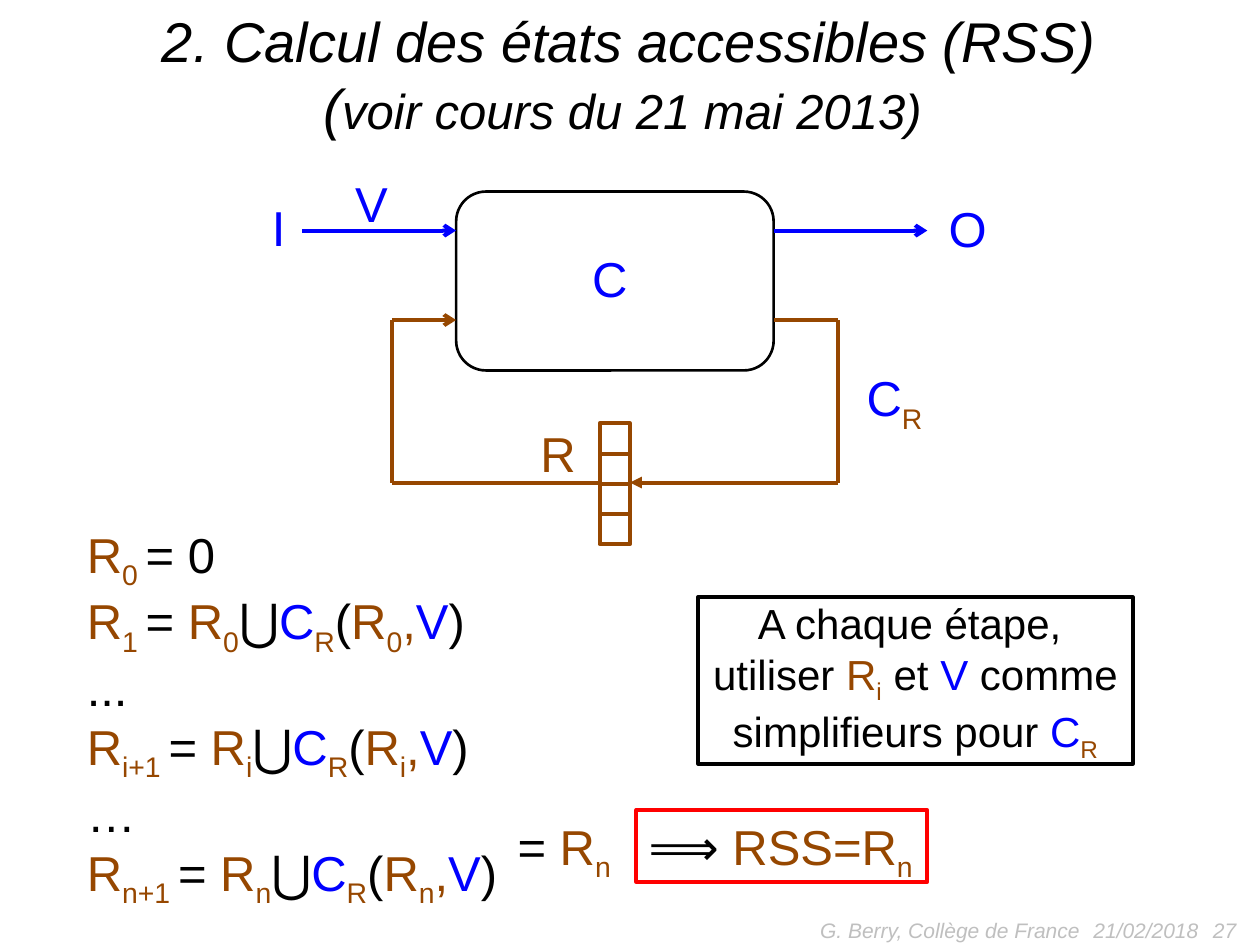
from lxml import etree
from pptx import Presentation
from pptx.dml.color import RGBColor
from pptx.enum.shapes import MSO_CONNECTOR, MSO_SHAPE
from pptx.enum.text import MSO_ANCHOR, MSO_AUTO_SIZE, PP_ALIGN
from pptx.oxml.ns import qn
from pptx.util import Inches, Pt

LEFT, CENTER, RIGHT = PP_ALIGN.LEFT, PP_ALIGN.CENTER, PP_ALIGN.RIGHT
TOP, MIDDLE = MSO_ANCHOR.TOP, MSO_ANCHOR.MIDDLE
FONT = "Arial"
COLORS = {"black": "000000", "blue": "0000FF", "brown": "964700",
          "red": "FF0000", "grey": "BFBFBF"}

# A run is (text, color) or (text, color, "sub").


def state(index):
    return [("R", "brown"), (index, "brown", "sub")]


def step(following, current):
    """Runs of one iteration: R_following = R_current ⋃ C_R(R_current, V)."""
    return [*state(following + " "), ("= ", "black"), *state(current),
            ("⋃", "black"), *NEXT_STATE, ("(", "black"), *state(current),
            (",", "brown"), ("V", "blue"), (")", "black")]


NEXT_STATE = [("C", "blue"), ("R", "brown", "sub")]
TITLE = [("2. Calcul des états accessibles (RSS)\v(", 32),
         ("voir cours du 21 mai 2013) ", 28)]
EQUATIONS = [
    [*state("0 "), ("= 0", "black")],
    step("1", "0"),
    [("...", "black")],
    step("i+1", "i"),
    [("…", "black")],
    step("n+1", "n"),
]
FIXPOINT = [("=", "black"), (" R", "brown"), ("n", "brown", "sub")]
RESULT = [("⟹", "black"), (" RSS=R", "brown"), ("n", "brown", "sub")]
ADVICE = [
    [("A chaque étape, ", "black")],
    [("utiliser ", "black"), *state("i"), (" et ", "black"),
     ("V", "blue"), (" comme", "black")],
    [("simplifieurs pour ", "black"), *NEXT_STATE],
]
FOOTER = [  # text, left, width, alignment
    ("21/02/2018", 8.58, 1.3, LEFT),
    (" 27", 7.58, 2.33, RIGHT),
    ("G. Berry, Collège de France", 5.5, 3.17, RIGHT),
]

# Circuit diagram, in inches
LOGIC_LEFT, LOGIC_TOP, LOGIC_W, LOGIC_H = 3.62, 1.52, 2.52, 1.42
LOGIC_RIGHT = LOGIC_LEFT + LOGIC_W
REGISTER_LEFT, REGISTER_TOP, CELL, CELLS = 4.76, 3.36, 0.24, 4
SIGNAL_Y, FEEDBACK_Y, REGISTER_Y = 1.83, 2.54, 3.83
LOOP_LEFT, LOOP_RIGHT, SIGNAL_LENGTH = 3.11, 6.65, 1.22
WIRES = [  # start, end, color, arrowhead
    ((REGISTER_LEFT, REGISTER_Y), (LOOP_LEFT, REGISTER_Y), "brown", None),
    ((LOOP_LEFT, FEEDBACK_Y), (LOOP_LEFT, REGISTER_Y), "brown", None),
    ((LOOP_RIGHT, FEEDBACK_Y), (LOOP_RIGHT, REGISTER_Y), "brown", None),
    ((LOOP_LEFT, FEEDBACK_Y), (LOGIC_LEFT, FEEDBACK_Y), "brown", "arrow"),
    ((LOOP_RIGHT, FEEDBACK_Y), (LOGIC_RIGHT, FEEDBACK_Y), "brown", None),
    ((LOGIC_LEFT - SIGNAL_LENGTH, SIGNAL_Y), (LOGIC_LEFT, SIGNAL_Y), "blue", "arrow"),
    ((LOGIC_RIGHT, SIGNAL_Y), (LOGIC_RIGHT + SIGNAL_LENGTH, SIGNAL_Y), "blue", "arrow"),
    ((LOOP_RIGHT, REGISTER_Y), (REGISTER_LEFT + CELL, REGISTER_Y), "brown", "triangle"),
]
LABELS = [  # runs, left, top, width
    ([("C", "blue")], 4.6, 1.92, 0.48),
    ([("I", "blue")], 2.06, 1.52, 0.31),
    ([("O", "blue")], 7.43, 1.53, 0.51),
    (NEXT_STATE, 6.78, 2.87, 0.68),
    ([("R", "brown")], 4.19, 3.31, 0.49),
    ([("V", "blue")], 2.72, 1.33, 0.46),
]
LABEL_H = 0.57


def rgb(color):
    return RGBColor.from_string(COLORS[color])


def style(run, size, color, italic=False):
    run.font.name, run.font.size, run.font.italic = FONT, Pt(size), italic
    run.font.color.rgb = rgb(color)


def write(shape, lines, size, align=LEFT, anchor=TOP, italic=False, wrap=False):
    frame = shape.text_frame
    frame.word_wrap, frame.vertical_anchor = wrap, anchor
    for number, runs in enumerate(lines):
        paragraph = frame.add_paragraph() if number else frame.paragraphs[0]
        paragraph.alignment = align
        for text, color, *sub in runs:
            run = paragraph.add_run()
            run.text = text
            style(run, size, color, italic)
            if sub:
                run.font._element.set("baseline", "-25000")


def add_text(slide, box, lines, size, **options):
    write(slide.shapes.add_textbox(*map(Inches, box)), lines, size, **options)


def add_frame(slide, preset, box, color, width=2.25):
    shape = slide.shapes.add_shape(preset, *map(Inches, box))
    shape.shadow.inherit = False
    shape.fill.background()
    shape.line.color.rgb = rgb(color)
    shape.line.width = Pt(width)
    return shape


def add_wire(slide, start, end, color, arrowhead):
    wire = slide.shapes.add_connector(
        MSO_CONNECTOR.STRAIGHT, *map(Inches, (*start, *end)))
    wire.line.color.rgb = rgb(color)
    wire.line.width = Pt(2.25)
    if arrowhead:
        etree.SubElement(wire.line._get_or_add_ln(), qn("a:tailEnd"), type=arrowhead)
    etree.SubElement(wire._element.spPr, qn("a:effectLst"))


def add_title(slide):
    title = slide.shapes.title
    title.left, title.top, title.width, title.height = map(Inches, (0.12, 0, 9.75, 1.18))
    frame = title.text_frame
    frame.auto_size, frame.vertical_anchor = MSO_AUTO_SIZE.NONE, TOP
    paragraph = frame.paragraphs[0]
    paragraph.alignment = CENTER
    (heading, heading_size), (reference, reference_size) = TITLE
    paragraph.text = heading
    for run in paragraph.runs:
        style(run, heading_size, "black", italic=True)
    run = paragraph.add_run()
    run.text = reference
    style(run, reference_size, "black", italic=True)


def main():
    prs = Presentation()
    prs.slide_width, prs.slide_height = Inches(10), Inches(7.5)
    slide = prs.slides.add_slide(prs.slide_layouts[5])
    add_title(slide)

    for text, left, width, align in FOOTER:
        add_text(slide, (left, 7.18, width, 0.4), [[(text, "grey")]], 12,
                 align=align, anchor=MIDDLE, italic=True, wrap=True)

    rectangle = MSO_SHAPE.RECTANGLE
    advice = add_frame(slide, rectangle, (5.54, 4.74, 3.45, 1.32), "black")
    write(advice, ADVICE, 24, align=CENTER, anchor=MIDDLE)
    add_text(slide, (0.59, 4.11, 3.61, 2.93), EQUATIONS, 28)
    add_text(slide, (4.01, 6.43, 1.04, LABEL_H), [FIXPOINT], 28)
    result = add_frame(slide, rectangle, (5.05, 6.43, 2.31, LABEL_H), "red")
    write(result, [RESULT], 28)

    for row in range(CELLS):
        add_frame(slide, rectangle,
                  (REGISTER_LEFT, REGISTER_TOP + row * CELL, CELL, CELL), "brown")
    add_frame(slide, MSO_SHAPE.ROUNDED_RECTANGLE,
              (LOGIC_LEFT, LOGIC_TOP, LOGIC_W, LOGIC_H), "black", 1.5)
    for wire in WIRES:
        add_wire(slide, *wire)
    for runs, left, top, width in LABELS:
        add_text(slide, (left, top, width, LABEL_H), [runs], 28)

    prs.save("out.pptx")


if __name__ == "__main__":
    main()
